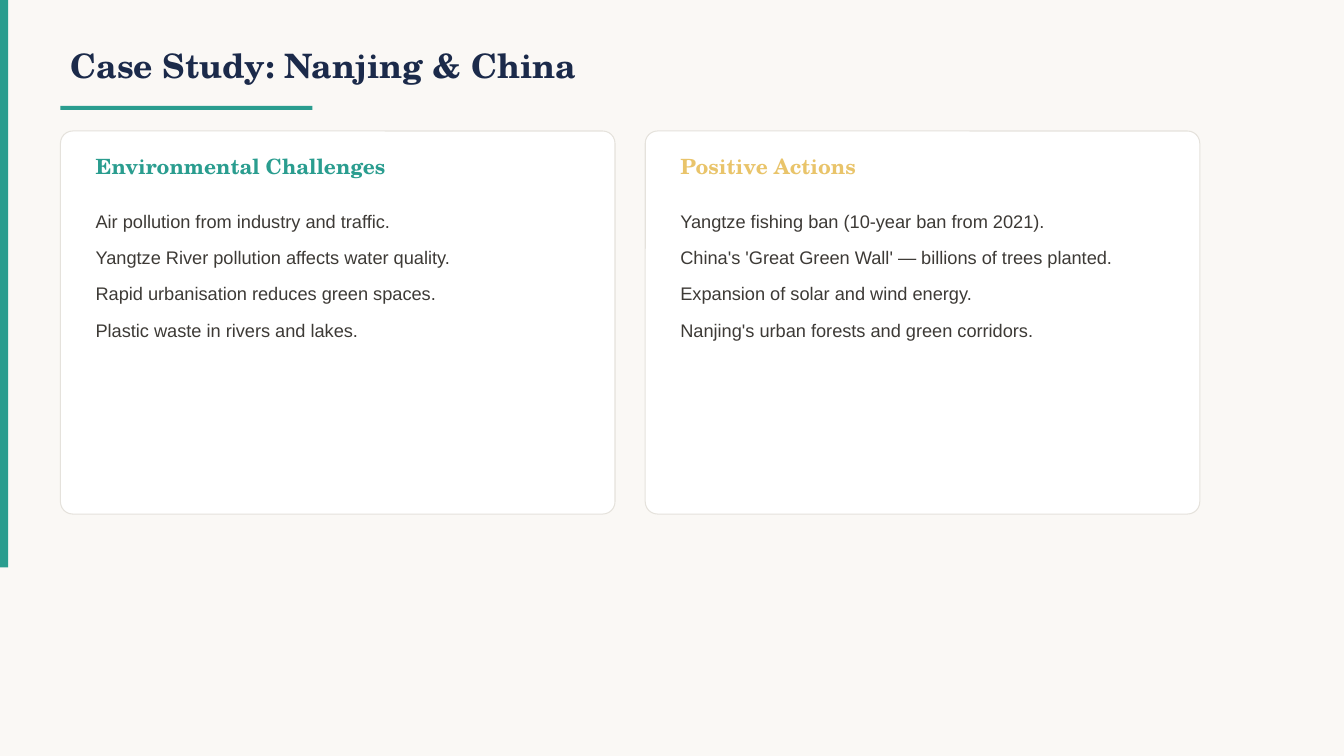
import pptx
import pptx.util
import pptx.dml.color
import pptx.enum.shapes
import pptx.enum.text

PX = 9144
COLORS = {
    "background": "FAF8F5",
    "teal": "2A9D8F",
    "gold": "E9C46A",
    "navy": "1B2A4A",
    "body": "3D3A36",
    "card": "FFFFFF",
    "border": "E5E2DC",
}
SHAPES = pptx.enum.shapes.MSO_SHAPE
ANCHORS = pptx.enum.text.MSO_ANCHOR
HEADING_FONT = "TeX Gyre Schola"

deck = pptx.Presentation()
deck.slide_width = 1333 * PX
deck.slide_height = 750 * PX
page = deck.slides.add_slide(deck.slide_layouts[6])
page.background.fill.solid()
page.background.fill.fore_color.rgb = pptx.dml.color.RGBColor.from_string(COLORS["background"])


def add_panel(kind, left, top, width, height, color):
    panel = page.shapes.add_shape(kind, left * PX, top * PX, width * PX, height * PX)
    panel.shadow.inherit = False
    panel.fill.solid()
    panel.fill.fore_color.rgb = pptx.dml.color.RGBColor.from_string(COLORS[color])
    panel.line.fill.background()
    return panel


def add_text(lines, left, top, width, height, font, size, color, bold, anchor):
    box = page.shapes.add_textbox(left * PX, top * PX, width * PX, height * PX)
    frame = box.text_frame
    frame.word_wrap = True
    frame.vertical_anchor = anchor
    frame.text = "\n".join(lines)
    for para in frame.paragraphs:
        for span in para.runs:
            span.font.name = font
            span.font.size = pptx.util.Pt(size)
            span.font.bold = bold
            span.font.color.rgb = pptx.dml.color.RGBColor.from_string(COLORS[color])
    return frame


add_panel(SHAPES.RECTANGLE, 0, 0, 8, 563, "teal")
add_text(["Case Study: Nanjing & China"], 60, 30, 1000, 70,
         HEADING_FONT, 24, "navy", True, ANCHORS.MIDDLE)
add_panel(SHAPES.RECTANGLE, 60, 105, 250, 4, "teal")

cards = [
    ("Environmental Challenges", "teal", [
        "Air pollution from industry and traffic.",
        "Yangtze River pollution affects water quality.",
        "Rapid urbanisation reduces green spaces.",
        "Plastic waste in rivers and lakes.",
    ]),
    ("Positive Actions", "gold", [
        "Yangtze fishing ban (10-year ban from 2021).",
        "China's 'Great Green Wall' — billions of trees planted.",
        "Expansion of solar and wind energy.",
        "Nanjing's urban forests and green corridors.",
    ]),
]
for index, (heading, accent, points) in enumerate(cards):
    left = 60 + index * 580
    card = add_panel(SHAPES.ROUNDED_RECTANGLE, left, 130, 550, 380, "card")
    card.adjustments[0] = 0.032
    card.line.color.rgb = pptx.dml.color.RGBColor.from_string(COLORS["border"])
    card.line.width = pptx.util.Pt(0.75)
    add_text([heading], left + 25, 145, 500, 40,
             HEADING_FONT, 15, accent, True, ANCHORS.MIDDLE)
    body = add_text(points, left + 25, 195, 500, 290,
                    "Arial", 13, "body", False, ANCHORS.TOP)
    for para in body.paragraphs:
        para.line_spacing = 1.4
        para.space_after = pptx.util.Pt(4)

deck.save("out.pptx")
